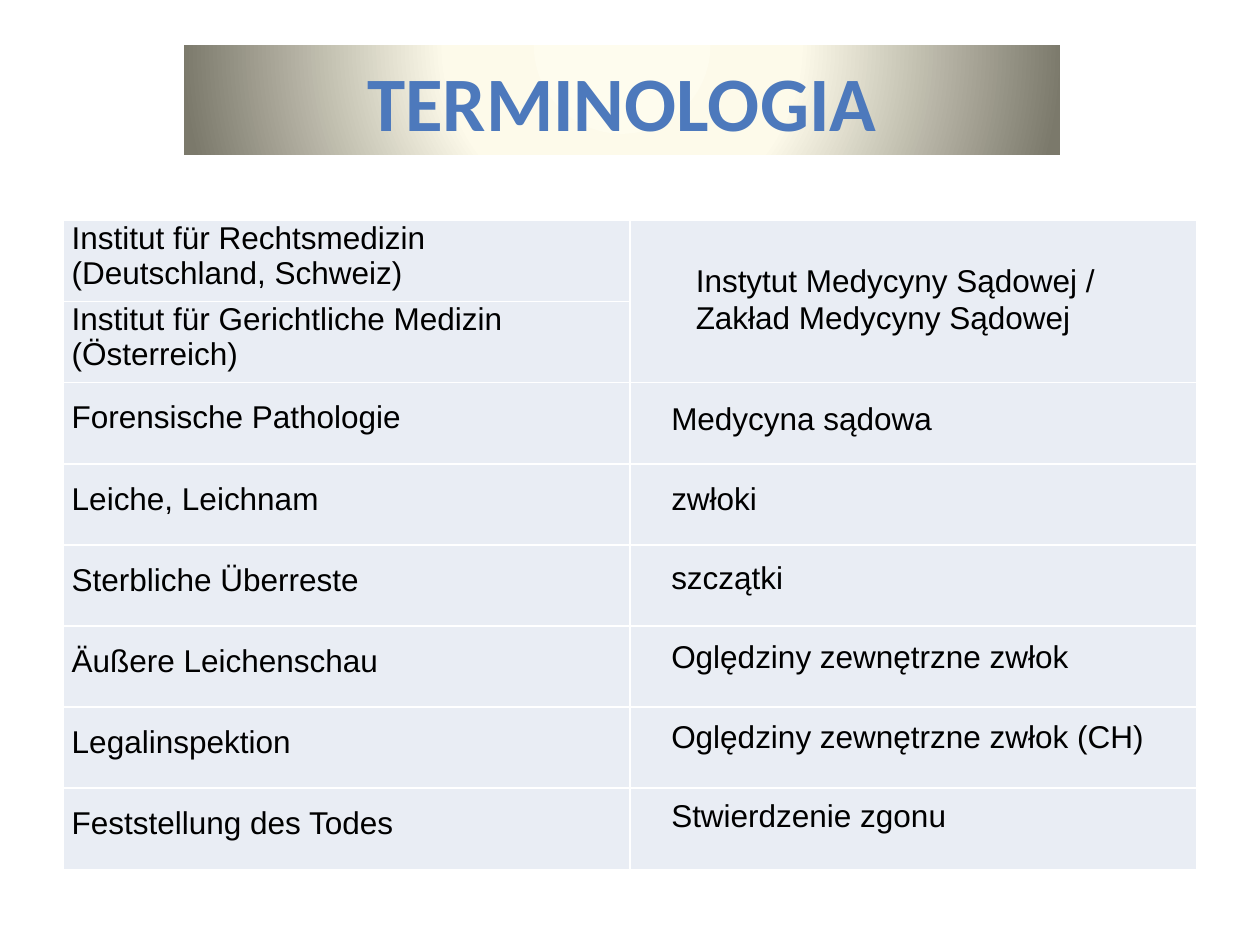
from lxml import etree
from pptx import Presentation
from pptx import util as u
from pptx.dml.color import RGBColor
from pptx.enum import text
from pptx.oxml import ns

TITLE_BLUE = RGBColor(0x4D, 0x79, 0xBC)
BLACK = RGBColor(0, 0, 0)
WHITE = RGBColor(0xFF, 0xFF, 0xFF)
CELL_FILL = RGBColor(0xE9, 0xED, 0xF4)
BANNER_STOPS = (
    (0, RGBColor(0xFE, 0xFC, 0xEE)),
    (40, RGBColor(0xFD, 0xFA, 0xEA)),
    (100, RGBColor(0x7B, 0x79, 0x6B)),
)
GERMAN_TERMS = (
    "Institut für Rechtsmedizin (Deutschland, Schweiz)",
    "Institut für Gerichtliche Medizin (Österreich)",
    "Forensische Pathologie",
    "Leiche, Leichnam",
    "Sterbliche Überreste",
    "Äußere Leichenschau",
    "Legalinspektion",
    "Feststellung des Todes",
)
INSTITUTES = "Instytut Medycyny Sądowej /\nZakład Medycyny Sądowej"
POLISH_TERMS = (
    "Medycyna sądowa",
    "zwłoki",
    "szczątki",
    "Oględziny zewnętrzne zwłok",
    "Oględziny zewnętrzne zwłok (CH)",
    "Stwierdzenie zgonu",
)


def add_element(parent, tag, **attributes):
    """Append a drawing element with the given attributes."""
    return etree.SubElement(parent, ns.qn(tag), attributes)


def format_runs(text_frame, font_name, size, color, bold=False):
    """Give every run of a text frame the same font."""
    for paragraph in text_frame.paragraphs:
        for run in paragraph.runs:
            run.font.name = font_name
            run.font.size = u.Pt(size)
            run.font.bold = bold
            run.font.color.rgb = color


def fill_banner(shape):
    """Fill a shape with a circular gradient centred above it."""
    gradient = add_element(shape._element.spPr, "a:gradFill", rotWithShape="1")
    stops = add_element(gradient, "a:gsLst")
    for position, color in BANNER_STOPS:
        stop = add_element(stops, "a:gs", pos=str(position * 1000))
        add_element(stop, "a:srgbClr", val=str(color))
    circle = add_element(gradient, "a:path", path="circle")
    add_element(circle, "a:fillToRect", l="50000", t="-80000", r="50000", b="180000")


def place_title(slide, left, top, width, height):
    """Place the title placeholder as a gradient banner."""
    title = slide.shapes.title
    title.left, title.top = u.Pt(left), u.Pt(top)
    title.width, title.height = u.Pt(width), u.Pt(height)
    fill_banner(title)
    text_frame = title.text_frame
    text_frame.text = "TERMINOLOGIA"
    text_frame.auto_size = text.MSO_AUTO_SIZE.NONE
    text_frame.vertical_anchor = text.MSO_ANCHOR.MIDDLE
    text_frame.paragraphs[0].alignment = text.PP_ALIGN.CENTER
    format_runs(text_frame, "Calibri", 44, TITLE_BLUE, bold=True)


def style_cell(cell):
    """Give a cell white borders, a pale fill and narrow margins."""
    properties = cell._tc.get_or_add_tcPr()
    for side in ("a:lnL", "a:lnR", "a:lnT", "a:lnB"):
        line = add_element(properties, side, w=str(u.Pt(1)))
        fill = add_element(line, "a:solidFill")
        add_element(fill, "a:srgbClr", val=str(WHITE))
    cell.fill.solid()
    cell.fill.fore_color.rgb = CELL_FILL
    cell.margin_left = cell.margin_right = u.Pt(5)
    cell.margin_top = cell.margin_bottom = 0


def place_german_table(slide, left, top, width, height):
    """Place the table with the German terms in its first column."""
    count = len(GERMAN_TERMS)
    frame = slide.shapes.add_table(
        count, 2, u.Pt(left), u.Pt(top), u.Pt(width), u.Pt(height)
    )
    table = frame.table
    table.first_row = table.horz_banding = False
    for index, term in enumerate(GERMAN_TERMS):
        table.rows[index].height = u.Pt(height / count)
        for column in range(2):
            style_cell(table.cell(index, column))
        text_frame = table.cell(index, 0).text_frame
        text_frame.text = term
        if index > 1:
            text_frame.paragraphs[0].line_spacing = 1.5
        format_runs(text_frame, "Arial", 18, BLACK)
    table.cell(0, 1).merge(table.cell(1, 1))


def add_term(slide, term, left, top, width, height):
    """Add a text box with a Polish term."""
    box = slide.shapes.add_textbox(u.Pt(left), u.Pt(top), u.Pt(width), u.Pt(height))
    text_frame = box.text_frame
    text_frame.word_wrap = True
    text_frame.auto_size = text.MSO_AUTO_SIZE.SHAPE_TO_FIT_TEXT
    text_frame.text = term
    format_runs(text_frame, "Arial", 18, BLACK)


def place_polish_terms(slide, left, top, width, pitch):
    """Place the Polish terms at equal steps beside the German ones."""
    add_term(slide, INSTITUTES, left + 14, top, width - 14, 51)
    for index, term in enumerate(POLISH_TERMS):
        add_term(slide, term, left, top + 79.2 + index * pitch, width, 29)


def main():
    """Build and save the terminology slide."""
    presentation = Presentation()
    presentation.slide_width, presentation.slide_height = u.Pt(720), u.Pt(540)
    slide = presentation.slides.add_slide(presentation.slide_layouts[5])
    place_title(slide, 105, 26, 501, 62.6)
    place_german_table(slide, 36, 126, 648, 370.8)
    place_polish_terms(slide, 376.5, 145.4, 301, 45.36)
    presentation.save("out.pptx")


if __name__ == "__main__":
    main()
